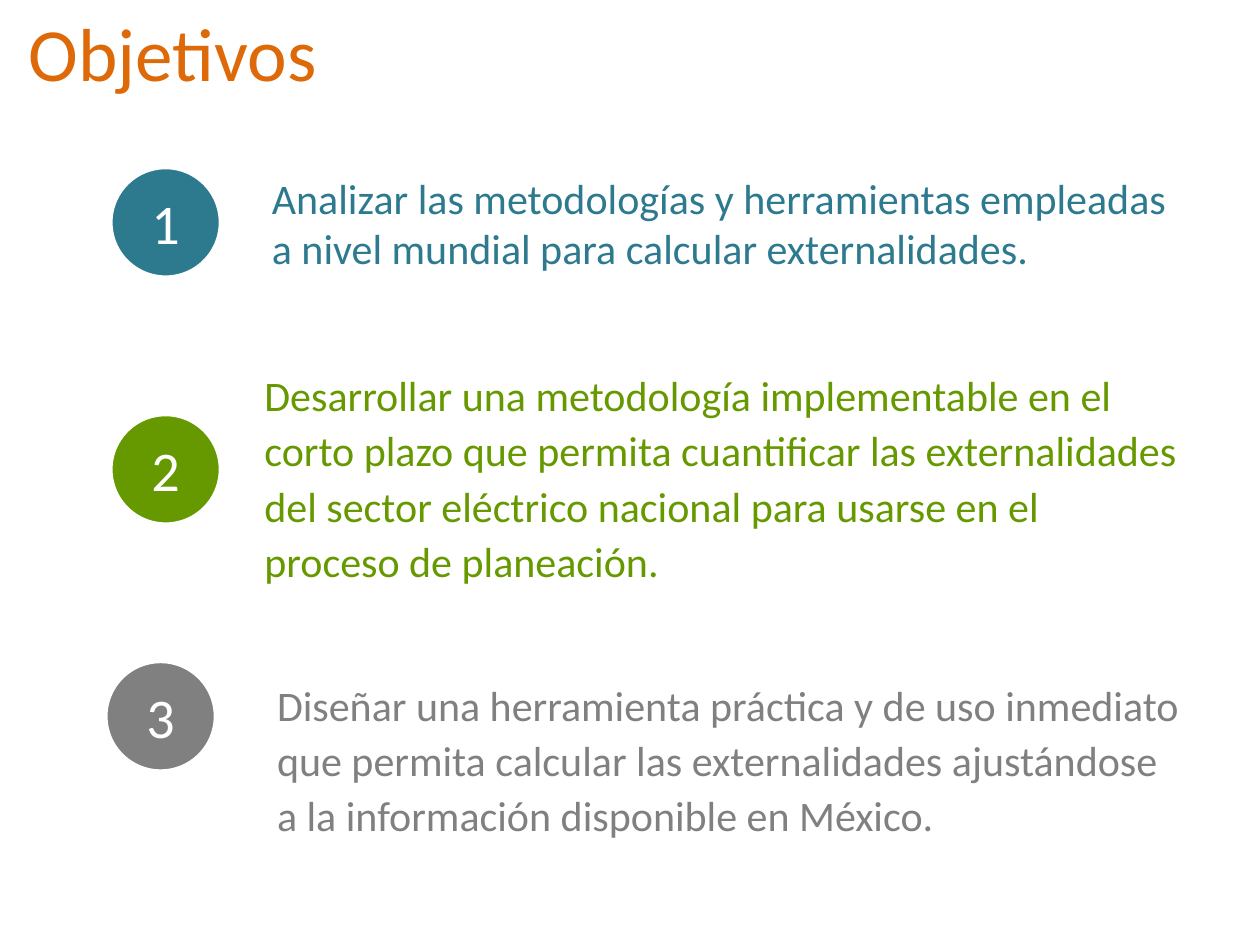
"""Build the slide of three numbered objectives."""
from pptx import Presentation
from pptx.dml.color import RGBColor
from pptx.enum.shapes import MSO_SHAPE
from pptx.enum.text import MSO_ANCHOR, PP_ALIGN
from pptx.util import Inches, Pt

TEAL = RGBColor(0x2D, 0x7A, 0x8F)
GREEN = RGBColor(0x66, 0x99, 0x00)
GRAY = RGBColor(0x80, 0x80, 0x80)
ORANGE = RGBColor(0xDD, 0x69, 0x09)
WHITE = RGBColor(0xFF, 0xFF, 0xFF)


def write(shape, text, size, color, align=PP_ALIGN.LEFT,
          anchor=MSO_ANCHOR.MIDDLE, space=1.0):
    frame = shape.text_frame
    frame.word_wrap = True
    frame.vertical_anchor = anchor
    par = frame.paragraphs[0]
    par.alignment = align
    par.line_spacing = space
    par.space_before = Pt(0)
    run = par.add_run()
    run.text = text
    run.font.name = "Calibri"
    run.font.size = Pt(size)
    run.font.color.rgb = color


deck = Presentation()
deck.slide_width, deck.slide_height = Inches(10), Inches(7.5)
slide = deck.slides.add_slide(deck.slide_layouts[5])

title = slide.shapes.title
title.left, title.top = 0, 0
title.width, title.height = Inches(8.5), Inches(1.09)
title.text_frame.margin_left = Inches(0.23)
write(title, "Objetivos", 42.9, ORANGE, anchor=MSO_ANCHOR.TOP)

SIZE = Inches(0.87)
FIRST, STEP = 1.33, 1.96
RIGHT = 9.49

goals = [
    (TEAL, 0.88, 2.06, 1.07, 1.39, 1.0,
     "Analizar las metodologías y herramientas empleadas a nivel mundial "
     "para calcular externalidades."),
    (GREEN, 0.88, 2.0, 2.69, 2.16, 1.1,
     "Desarrollar una metodología implementable en el corto plazo que "
     "permita cuantificar las externalidades del sector eléctrico nacional "
     "para usarse en el proceso de planeación."),
    (GRAY, 0.84, 2.1, 4.93, 2.16, 1.1,
     "Diseñar una herramienta práctica y de uso inmediato que permita "
     "calcular las externalidades ajustándose a la información disponible "
     "en México."),
]

for row, (color, edge, left, top, height, space, text) in enumerate(goals):
    disc = slide.shapes.add_shape(
        MSO_SHAPE.OVAL, Inches(edge), Inches(FIRST + row * STEP), SIZE, SIZE)
    disc.shadow.inherit = False
    disc.fill.solid()
    disc.fill.fore_color.rgb = color
    disc.line.color.rgb = WHITE
    disc.line.width = Pt(2)
    write(disc, str(row + 1), 32, WHITE, align=PP_ALIGN.CENTER)

    box = slide.shapes.add_textbox(
        Inches(left), Inches(top), Inches(RIGHT - left), Inches(height))
    write(box, text, 24, color, space=space)

deck.save("out.pptx")
